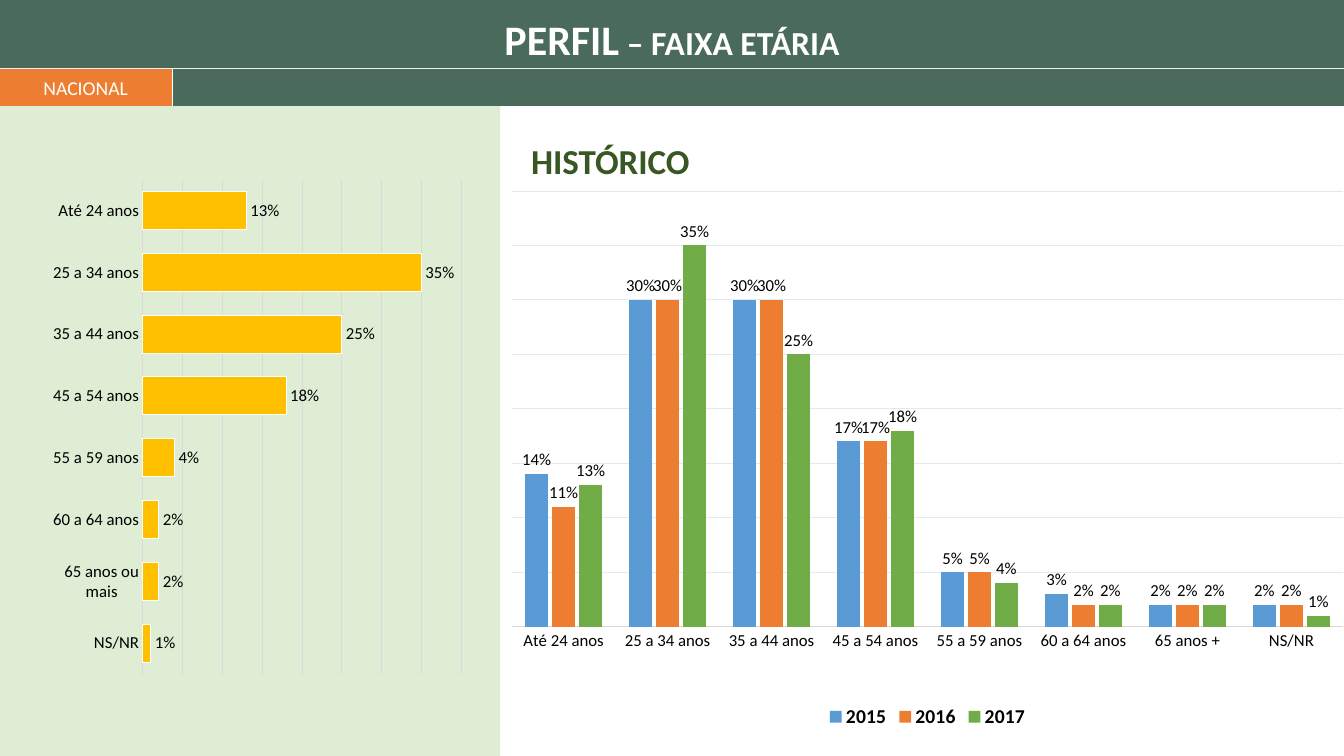
from lxml import etree
from pptx import Presentation
from pptx.chart.data import CategoryChartData
from pptx.dml.color import RGBColor
from pptx.enum import chart as ch, shapes, text
from pptx.oxml import parse_xml
from pptx.oxml.ns import nsdecls, qn
from pptx.util import Inches, Pt

WHITE = RGBColor(0xFF, 0xFF, 0xFF)
BLACK = RGBColor(0, 0, 0)
PALE_GREEN = RGBColor(0xC5, 0xE0, 0xB4)
BANNER_GREEN = RGBColor(0x4A, 0x6A, 0x5C)
HEADING_GREEN = RGBColor(0x38, 0x57, 0x23)
ORANGE = RGBColor(0xED, 0x7D, 0x31)
BLUE = RGBColor(0x5B, 0x9B, 0xD5)
GREEN = RGBColor(0x70, 0xAD, 0x47)
YELLOW = RGBColor(0xFF, 0xC0, 0x00)
RULE_GRAY = RGBColor(0xF2, 0xF2, 0xF2)
AXIS_GRAY = RGBColor(0xD9, 0xD9, 0xD9)
GRID_BLUE = RGBColor(0xDE, 0xEB, 0xF7)


def style_font(font, size, color, bold=False):
    font.name = "Calibri"
    font.size = Pt(size)
    font.bold = bold
    font.color.rgb = color


def add_percent_chart(kind, box, cats, series, gap, overlap, grid, layout):
    """series holds (name, values, color); layout is the inner plot's x, y, w, h."""
    data = CategoryChartData(number_format="0%")
    data.categories = cats
    for name, values, _ in series:
        data.add_series(name, values)
    chart = s.shapes.add_chart(kind, *map(Inches, box), data).chart
    style_font(chart.font, 12, BLACK)
    chart.has_title = False
    chart.has_legend = False

    plot = chart.plots[0]
    plot.gap_width, plot.overlap = gap, overlap
    plot.vary_by_categories = False
    plot.has_data_labels = True
    labels = plot.data_labels
    labels.show_value = True
    labels.number_format = "0%"
    labels.number_format_is_linked = False
    labels.position = ch.XL_LABEL_POSITION.OUTSIDE_END
    style_font(labels.font, 12, BLACK)
    for ser, (_, _, color) in zip(plot.series, series):
        ser.format.fill.solid()
        ser.format.fill.fore_color.rgb = color

    cat_axis, val_axis = chart.category_axis, chart.value_axis
    cat_axis.major_tick_mark = ch.XL_TICK_MARK.NONE
    cat_axis.format.line.color.rgb = AXIS_GRAY
    cat_axis.format.line.width = Pt(0.75)
    val_axis.minimum_scale, val_axis.maximum_scale = 0, 0.4
    val_axis.major_unit = 0.05
    val_axis.visible = False
    val_axis.major_gridlines.format.line.color.rgb = grid
    val_axis.major_gridlines.format.line.width = Pt(0.75)

    area = chart._chartSpace.chart.plotArea
    for old in area.findall(qn("c:layout")):
        area.remove(old)
    parts = [("layoutTarget", "inner"), ("xMode", "edge"), ("yMode", "edge")]
    parts += zip("xywh", layout)
    inner = "".join(f'<c:{tag} val="{val}"/>' for tag, val in parts)
    area.insert(0, parse_xml(
        f'<c:layout {nsdecls("c")}><c:manualLayout>{inner}</c:manualLayout></c:layout>'))
    return chart


prs = Presentation()
prs.slide_width, prs.slide_height = Inches(13.33), Inches(7.5)
s = prs.slides.add_slide(prs.slide_layouts[5])

# Panel, banner and tag
blocks = []
for box, color in [((0, 0, 4.96, 7.5), PALE_GREEN),
                   ((-0.01, 0, 13.34, 1.05), BANNER_GREEN),
                   ((-0.01, 0.68, 1.72, 0.37), ORANGE)]:
    sp = s.shapes.add_shape(shapes.MSO_SHAPE.RECTANGLE, *map(Inches, box))
    sp.shadow.inherit = False
    sp.fill.solid()
    sp.fill.fore_color.rgb = color
    sp.line.fill.background()
    blocks.append(sp)
panel, banner, tag = blocks
panel_color = panel._element.spPr.find(qn("a:solidFill"))[0]
etree.SubElement(panel_color, qn("a:alpha"), val="56000")

tf = tag.text_frame
tf.vertical_anchor = text.MSO_ANCHOR.MIDDLE
p = tf.paragraphs[0]
p.text = "NACIONAL"
p.alignment = text.PP_ALIGN.CENTER
style_font(p.font, 14, WHITE)

# Title, in front of the banner
title = s.shapes.title
banner._element.addnext(title._element)
title.left, title.top = Inches(0), Inches(0.08)
title.width, title.height = Inches(13.33), Inches(0.61)
tf = title.text_frame
tf.auto_size = text.MSO_AUTO_SIZE.NONE
tf.vertical_anchor = text.MSO_ANCHOR.TOP
p = tf.paragraphs[0]
p.alignment = text.PP_ALIGN.CENTER
for words, size in [("PERFIL", 30), (" – FAIXA ETÁRIA", 24)]:
    r = p.add_run()
    r.text = words
    style_font(r.font, size, WHITE, bold=True)

# White rules around the tag
for ends, color, width in [((1.71, 1.05, 1.71, 0.68), WHITE, 0.5),
                           ((-0.01, 0.68, 13.33, 0.68), RULE_GRAY, 1)]:
    line = s.shapes.add_connector(shapes.MSO_CONNECTOR.STRAIGHT, *map(Inches, ends))
    line.line.color.rgb = color
    line.line.width = Pt(width)
    etree.SubElement(line._element.spPr, qn("a:effectLst"))

# Current profile
ages = ["Até 24 anos", "25 a 34 anos", "35 a 44 anos", "45 a 54 anos",
        "55 a 59 anos", "60 a 64 anos"]
current = [0.13, 0.35, 0.25, 0.18, 0.04, 0.02, 0.02, 0.01]
profile = add_percent_chart(
    ch.XL_CHART_TYPE.BAR_CLUSTERED, (0.45, 1.68, 4.21, 5.11),
    ages + ["65 anos ou mais", "NS/NR"], [("Series 1", current, YELLOW)],
    63, -70, AXIS_GRAY, (0.23, 0.02, 0.75, 0.96))
profile.category_axis.reverse_order = True
bar_line = profile.plots[0].series[0].format.line
bar_line.color.rgb = WHITE
bar_line.width = Pt(0.75)

# History
heading = s.shapes.add_textbox(Inches(5.17), Inches(1.33), Inches(7.1), Inches(0.52))
tf = heading.text_frame
tf.word_wrap = True
p = tf.paragraphs[0]
p.text = "HISTÓRICO"
style_font(p.font, 25, HEADING_GREEN, bold=True)

history = add_percent_chart(
    ch.XL_CHART_TYPE.COLUMN_CLUSTERED, (5.07, 1.73, 8.26, 5.54),
    ages + ["65 anos +", "NS/NR"],
    [("2015", [0.14, 0.3, 0.3, 0.17, 0.05, 0.03, 0.02, 0.02], BLUE),
     ("2016", [0.11, 0.3, 0.3, 0.17, 0.05, 0.02, 0.02, 0.02], ORANGE),
     ("2017", current, GREEN)],
    121, -19, GRID_BLUE, (0, 0.03, 1, 0.78))
history.has_legend = True
history.legend.position = ch.XL_LEGEND_POSITION.BOTTOM
history.legend.include_in_layout = False
style_font(history.legend.font, 14, BLACK, bold=True)

prs.save("out.pptx")
